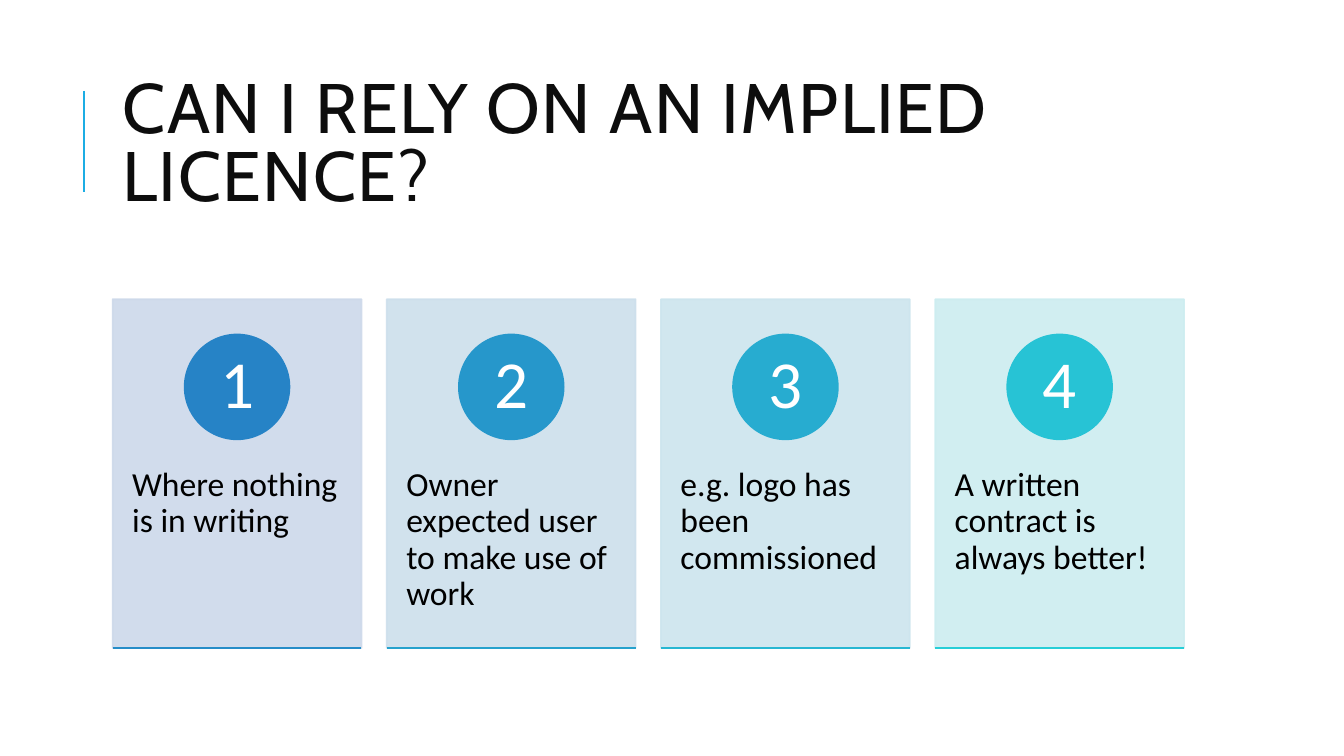
from dataclasses import dataclass

from pptx import Presentation
from pptx import util as u
from pptx.dml.color import RGBColor
from pptx.enum import shapes, text
from pptx.oxml import ns
from lxml import etree

Cm, Pt = u.Cm, u.Pt


@dataclass(frozen=True)
class Theme:
    heading_font: str = "Cabin"
    body_font: str = "Calibri"
    title_size: float = 50
    number_size: float = 48
    body_size: float = 24
    title_color: str = "0D0D0D"
    body_color: str = "000000"
    number_color: str = "FFFFFF"
    accent: str = "1CADE4"
    card_opacity: int = 90
    card_line: float = 1.25
    accent_line: float = 1.5
    cards: tuple = ("CDD9EA", "CDDFEC", "CDE5EE", "CDEDF0")
    circles: tuple = ("2683C6", "2697CB", "27ACD0", "27C3D5")
    rules: tuple = ("268DC8", "26A2CD", "27B7D2", "27CED7")


THEME = Theme()
TITLE = "CAN I RELY ON AN IMPLIED LICENCE?"
POINTS = (
    "Where nothing is in writing",
    "Owner expected user to make use of work",
    "e.g. logo has been commissioned",
    "A written contract is always better!",
)


def add_line(s, x1, y1, x2, y2, color, width):
    line = s.shapes.add_connector(
        shapes.MSO_CONNECTOR.STRAIGHT, Cm(x1), Cm(y1), Cm(x2), Cm(y2))
    line.line.color.rgb = RGBColor.from_string(color)
    line.line.width = Pt(width)
    etree.SubElement(line._element.spPr, ns.qn("a:effectLst"))


def add_filled(s, kind, x, y, w, h, color, opacity=100):
    sp = s.shapes.add_shape(kind, Cm(x), Cm(y), Cm(w), Cm(h))
    sp.shadow.inherit = False
    sp.fill.solid()
    sp.fill.fore_color.rgb = RGBColor.from_string(color)
    sp.line.color.rgb = RGBColor.from_string(color)
    sp.line.width = Pt(THEME.card_line)
    if opacity < 100:
        for clr in sp._element.spPr.iter(ns.qn("a:srgbClr")):
            etree.SubElement(clr, ns.qn("a:alpha"), val=str(opacity * 1000))
    return sp


def write(sp, words, font, size, color, inset, spacing=0.9,
          align=text.PP_ALIGN.LEFT, anchor=text.MSO_ANCHOR.MIDDLE):
    tf = sp.text_frame
    tf.word_wrap = True
    tf.vertical_anchor = anchor
    tf.margin_left = tf.margin_right = Cm(inset[0])
    tf.margin_top = tf.margin_bottom = Cm(inset[1])
    p = tf.paragraphs[0]
    p.text = words
    p.alignment = align
    p.line_spacing = spacing
    p.font.name = font
    p.font.size = Pt(size)
    p.font.color.rgb = RGBColor.from_string(color)
    return p


def add_title(s, x, y, w, h):
    add_line(s, x - 0.73, y + 0.66, x - 0.73, y + 3.2,
             THEME.accent, THEME.accent_line)
    sp = s.shapes.add_textbox(Cm(x), Cm(y), Cm(w), Cm(h))
    p = write(sp, TITLE, THEME.heading_font, THEME.title_size,
              THEME.title_color, (0.25, 0.13), spacing=0.8)
    p.runs[0]._r.get_or_add_rPr().set("spc", "100")


def add_card(s, x, y, w, h, index):
    add_filled(s, shapes.MSO_SHAPE.RECTANGLE, x, y, w, h,
               THEME.cards[index], THEME.card_opacity)
    body = s.shapes.add_textbox(Cm(x), Cm(y + 3.33), Cm(w), Cm(h - 3.51))
    write(body, POINTS[index], THEME.body_font, THEME.body_size,
          THEME.body_color, (0.49, 0.91), anchor=text.MSO_ANCHOR.TOP)
    size = 2.64
    circle = add_filled(s, shapes.MSO_SHAPE.OVAL, x + (w - size) / 2,
                        y + 0.89, size, size, THEME.circles[index])
    write(circle, str(index + 1), THEME.body_font, THEME.number_size,
          THEME.number_color, (0.2, 0.03), align=text.PP_ALIGN.CENTER)
    add_line(s, x, y + h, x + w, y + h, THEME.rules[index], THEME.card_line)


def add_cards(s, x, y, w, h, gap=0.64):
    count = len(POINTS)
    card_w = (w - gap * (count - 1)) / count
    for i in range(count):
        add_card(s, x + i * (card_w + gap), y, card_w, h, i)


def main():
    prs = Presentation()
    prs.slide_width, prs.slide_height = Cm(33.87), Cm(19.05)
    s = prs.slides.add_slide(prs.slide_layouts[6])
    add_title(s, 2.84, 1.63, 27, 4.17)
    add_cards(s, 2.84, 7.54, 27, 8.79)
    prs.save("out.pptx")


if __name__ == "__main__":
    main()
